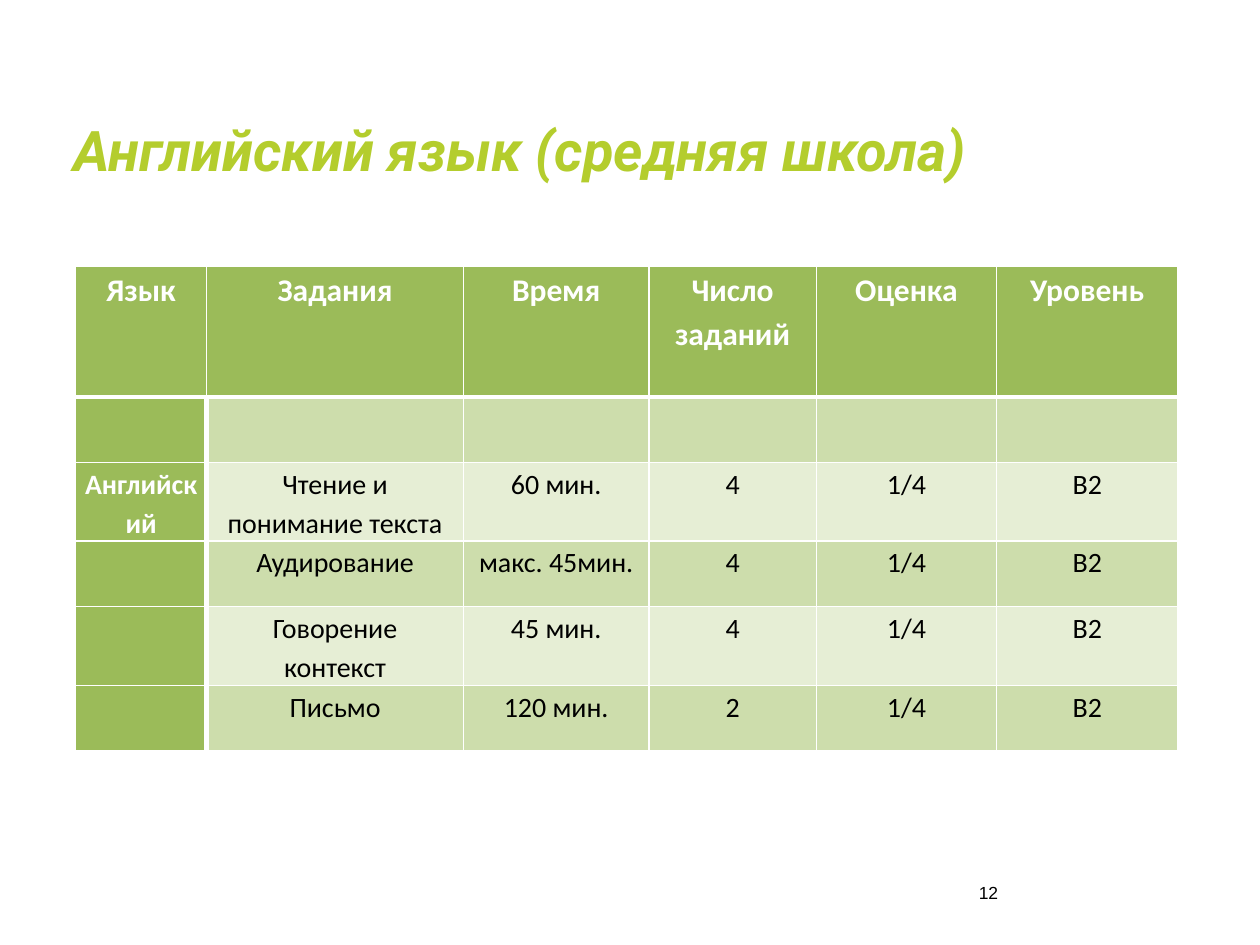
from lxml import etree
from pptx import Presentation
from pptx.dml.color import RGBColor
from pptx.enum import text
from pptx.oxml import ns
from pptx.util import Inches, Pt

LIME = RGBColor(0xB4, 0xCD, 0x2D)
GREEN = RGBColor(0x9B, 0xBB, 0x59)
BAND_DARK = RGBColor(0xCD, 0xDD, 0xAC)
BAND_LIGHT = RGBColor(0xE6, 0xEE, 0xD5)
WHITE = RGBColor(0xFF, 0xFF, 0xFF)
BLACK = RGBColor(0, 0, 0)

COLUMN_WIDTHS = [1.04, 2.04, 1.47, 1.33, 1.43, 1.44]
ROW_HEIGHTS = [1.04] + [0.52] * 5
EXAM_ROWS = [
    ["Язык", "Задания", "Время", "Число заданий", "Оценка", "Уровень"],
    [""] * 6,
    ["Английский", "Чтение и понимание текста", "60 мин.", "4", "1/4", "B2"],
    ["", "Аудирование", "макс. 45мин.", "4", "1/4", "B2"],
    ["", "Говорение\nконтекст", "45 мин.", "4", "1/4", "B2"],
    ["", "Письмо", "120 мин.", "2", "1/4", "B2"],
]


def add_run(paragraph, words, font_name, size, color, bold=False, italic=False):
    run = paragraph.add_run()
    run.text = words
    font = run.font
    font.name, font.size, font.bold, font.italic = font_name, Pt(size), bold, italic
    font.color.rgb = color


def add_title(slide, words):
    title = slide.shapes.title
    title.left, title.top = Inches(0.48), Inches(0.79)
    title.width, title.height = Inches(9.5), Inches(0.79)
    frame = title.text_frame
    frame.auto_size = text.MSO_AUTO_SIZE.NONE
    frame.vertical_anchor = text.MSO_ANCHOR.MIDDLE
    paragraph = frame.paragraphs[0]
    paragraph.alignment = text.PP_ALIGN.LEFT
    add_run(paragraph, words, "Roboto", 32, LIME, bold=True, italic=True)


def set_borders(cell, widths):
    """Draw white borders; widths are points for left, right, top, bottom."""
    properties = cell._tc.get_or_add_tcPr()
    for index, (side, width) in enumerate(zip("LRTB", widths)):
        line = etree.Element(ns.qn(f"a:ln{side}"), w=str(Pt(width)))
        fill = etree.SubElement(line, ns.qn("a:solidFill"))
        etree.SubElement(fill, ns.qn("a:srgbClr"), val=str(WHITE))
        properties.insert(index, line)


def fill_cell(cell, words, row, column):
    is_heading = row == 0 or column == 0
    cell.margin_left = cell.margin_right = Inches(0.07)
    cell.margin_top = cell.margin_bottom = 0
    cell.fill.solid()
    band = BAND_DARK if row % 2 else BAND_LIGHT
    cell.fill.fore_color.rgb = GREEN if is_heading else band
    set_borders(cell, [
        3 if row > 0 and column == 1 else 1,
        3 if row > 0 and column == 0 else 1,
        3 if row == 1 else 1,
        3 if row == 0 else 1,
    ])
    if not words:
        return
    frame = cell.text_frame
    for index, line in enumerate(words.split("\n")):
        paragraph = frame.add_paragraph() if index else frame.paragraphs[0]
        paragraph.alignment = text.PP_ALIGN.CENTER
        paragraph.line_spacing = 1.15
        add_run(paragraph, line, "Calibri", 18 if row == 0 else 16,
                WHITE if is_heading else BLACK, bold=is_heading)


def add_exam_table(slide):
    frame = slide.shapes.add_table(
        len(ROW_HEIGHTS), len(COLUMN_WIDTHS), Inches(0.6), Inches(2.11),
        Inches(sum(COLUMN_WIDTHS)), Inches(sum(ROW_HEIGHTS)))
    table = frame.table
    table.first_col = True
    for column, width in zip(table.columns, COLUMN_WIDTHS):
        column.width = Inches(width)
    for row, height in zip(table.rows, ROW_HEIGHTS):
        row.height = Inches(height)
    for row, values in enumerate(EXAM_ROWS):
        for column, words in enumerate(values):
            fill_cell(table.cell(row, column), words, row, column)


def add_page_number(slide, number):
    box = slide.shapes.add_textbox(Inches(7.67), Inches(6.95), Inches(2.33), Inches(0.4))
    box.text_frame.word_wrap = True
    add_run(box.text_frame.paragraphs[0], number, "Arial", 10, BLACK)


def main():
    presentation = Presentation()
    presentation.slide_width, presentation.slide_height = Inches(10), Inches(7.5)
    slide = presentation.slides.add_slide(presentation.slide_layouts[5])
    add_exam_table(slide)
    add_page_number(slide, "12")
    add_title(slide, "Английский язык (средняя школа)")
    presentation.save("out.pptx")


if __name__ == "__main__":
    main()
